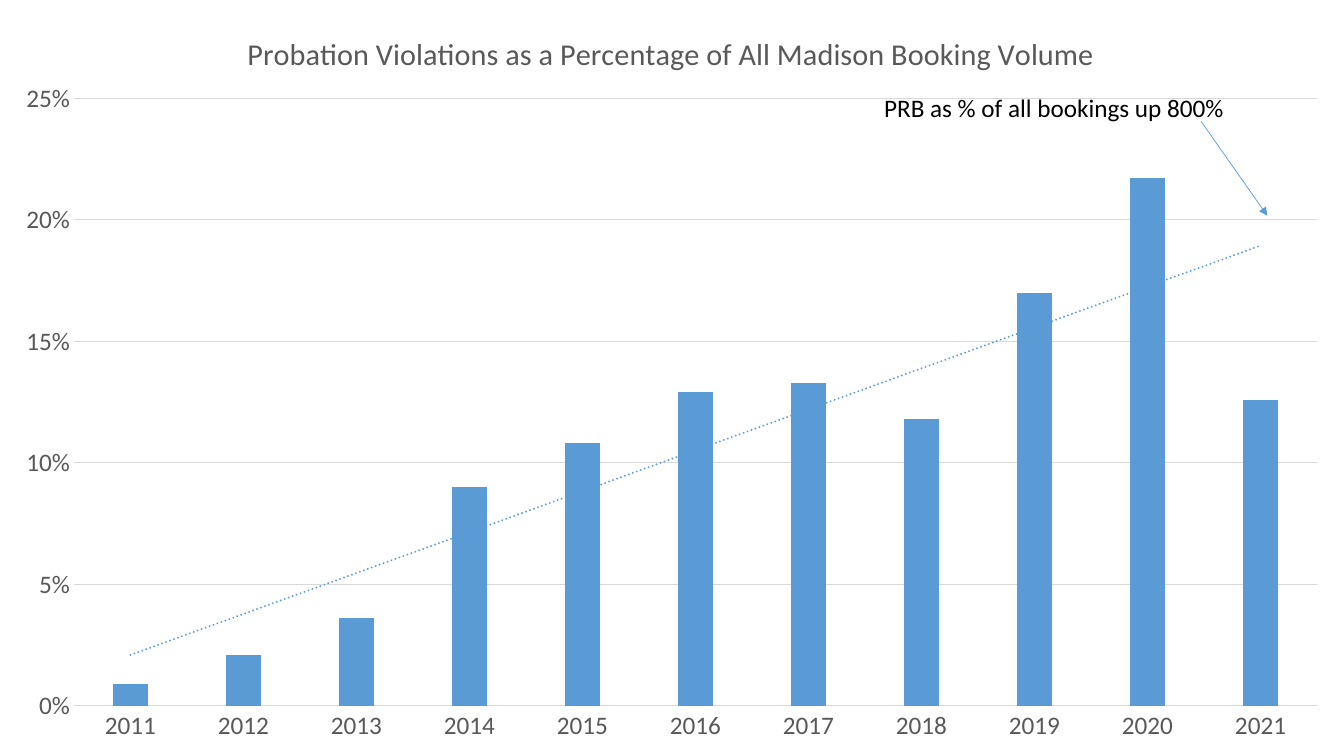
"""Build a slide charting probation violations as a share of bookings."""
import pptx
import pptx.chart.data
import pptx.dml.color
import pptx.enum.chart
import pptx.enum.shapes
import pptx.enum.text
import pptx.oxml
import pptx.oxml.ns
import pptx.util
from pptx.util import Inches

TITLE = "Probation Violations as a Percentage of All Madison Booking Volume"
NOTE = "PRB as % of all bookings up 800%"
FIRST_YEAR = 2011
SHARES = [0.009, 0.021, 0.036, 0.09, 0.108, 0.129, 0.133, 0.118, 0.17, 0.217, 0.126]
SLIDE_SIZE = (13.33, 7.5)
NOTE_BOX = (8.67, 0.87, 3.61, 0.4)
ARROW = (11.91, 1.2, 12.57, 2.14)
PLOT_PLACE = {"layoutTarget": "inner", "xMode": "edge", "yMode": "edge",
              "x": 0.055, "y": 0.13, "w": 0.925, "h": 0.804}
TITLE_PLACE = {"xMode": "edge", "yMode": "edge", "x": 0.18, "y": 0.035}

BLUE = pptx.dml.color.RGBColor(0x5B, 0x9B, 0xD5)
GRAY = pptx.dml.color.RGBColor(0x59, 0x59, 0x59)
PALE = pptx.dml.color.RGBColor(0xD9, 0xD9, 0xD9)
BLACK = pptx.dml.color.RGBColor(0, 0, 0)
NAMESPACES = pptx.oxml.ns.nsdecls("a", "c")


def set_font(font, size, color):
    """Apply the slide's typeface with a size and colour."""
    values = {"name": "Calibri", "size": pptx.util.Pt(size), "bold": False}
    for name, value in values.items():
        setattr(font, name, value)
    font.color.rgb = color


def set_line(line, color, width):
    """Give a line its colour and width."""
    line.color.rgb = color
    line.width = pptx.util.Pt(width)


def place(element, index, values):
    """Fix the place of a chart part as fractions of the chart."""
    for layout in element.findall(pptx.oxml.ns.qn("c:layout")):
        element.remove(layout)
    parts = "".join(f'<c:{name} val="{value}"/>' for name, value in values.items())
    element.insert(index, pptx.oxml.parse_xml(
        f"<c:layout {NAMESPACES}><c:manualLayout>{parts}</c:manualLayout></c:layout>"))


def add_trend(series):
    """Add a dotted linear trend line to a series."""
    trend = pptx.oxml.parse_xml(
        f'<c:trendline {NAMESPACES}><c:spPr><a:ln w="19050" cap="rnd"><a:solidFill>'
        f'<a:srgbClr val="{BLUE}"/></a:solidFill><a:prstDash val="sysDot"/></a:ln></c:spPr>'
        '<c:trendlineType val="linear"/><c:dispRSqr val="0"/><c:dispEq val="0"/></c:trendline>')
    series._element.find(pptx.oxml.ns.qn("c:cat")).addprevious(trend)


def add_share_chart(page):
    """Draw the yearly columns across the whole page."""
    data = pptx.chart.data.CategoryChartData(number_format="0%")
    data.categories = [str(FIRST_YEAR + step) for step in range(len(SHARES))]
    data.add_series("Series 1", SHARES)
    chart = page.shapes.add_chart(
        pptx.enum.chart.XL_CHART_TYPE.COLUMN_CLUSTERED, 0, 0,
        *map(Inches, SLIDE_SIZE), data).chart
    chart.has_legend = False
    set_font(chart.font, 18, BLACK)

    title = chart.chart_title
    title.text_frame.text = TITLE
    set_font(title.text_frame.paragraphs[0].runs[0].font, 21.6, GRAY)
    place(title._element, 1, TITLE_PLACE)
    place(chart._chartSpace.chart.plotArea, 0, PLOT_PLACE)

    plot = chart.plots[0]
    for name, value in {"gap_width": 219, "overlap": -27, "vary_by_categories": False}.items():
        setattr(plot, name, value)
    series = plot.series[0]
    series.format.fill.solid()
    series.format.fill.fore_color.rgb = BLUE
    add_trend(series)

    years, shares = chart.category_axis, chart.value_axis
    for axis in (years, shares):
        axis.major_tick_mark = pptx.enum.chart.XL_TICK_MARK.NONE
        axis.minor_tick_mark = pptx.enum.chart.XL_TICK_MARK.NONE
        set_font(axis.tick_labels.font, 18, GRAY)
    set_line(years.format.line, PALE, 0.75)
    shares.format.line.fill.background()
    set_line(shares.major_gridlines.format.line, PALE, 0.75)
    for name, value in {"minimum_scale": 0, "maximum_scale": 0.25, "major_unit": 0.05}.items():
        setattr(shares, name, value)
    shares.tick_labels.number_format = "0%"
    shares.tick_labels.number_format_is_linked = False


def add_note(page):
    """Write the remark and point its arrow at the last year."""
    frame = page.shapes.add_textbox(*map(Inches, NOTE_BOX)).text_frame
    frame.word_wrap = False
    frame.auto_size = pptx.enum.text.MSO_AUTO_SIZE.SHAPE_TO_FIT_TEXT
    span = frame.paragraphs[0].add_run()
    span.text = NOTE
    set_font(span.font, 18, BLACK)
    arrow = page.shapes.add_connector(
        pptx.enum.shapes.MSO_CONNECTOR.STRAIGHT, *map(Inches, ARROW))
    set_line(arrow.line, BLUE, 0.5)
    arrow.line._get_or_add_ln().append(
        pptx.oxml.parse_xml(f'<a:tailEnd {NAMESPACES} type="triangle"/>'))
    arrow._element.spPr.append(pptx.oxml.parse_xml(f"<a:effectLst {NAMESPACES}/>"))


def main():
    """Assemble and save the deck."""
    deck = pptx.Presentation()
    deck.slide_width, deck.slide_height = map(Inches, SLIDE_SIZE)
    page = deck.slides.add_slide(deck.slide_layouts[6])
    add_share_chart(page)
    add_note(page)
    deck.save("out.pptx")


if __name__ == "__main__":
    main()
